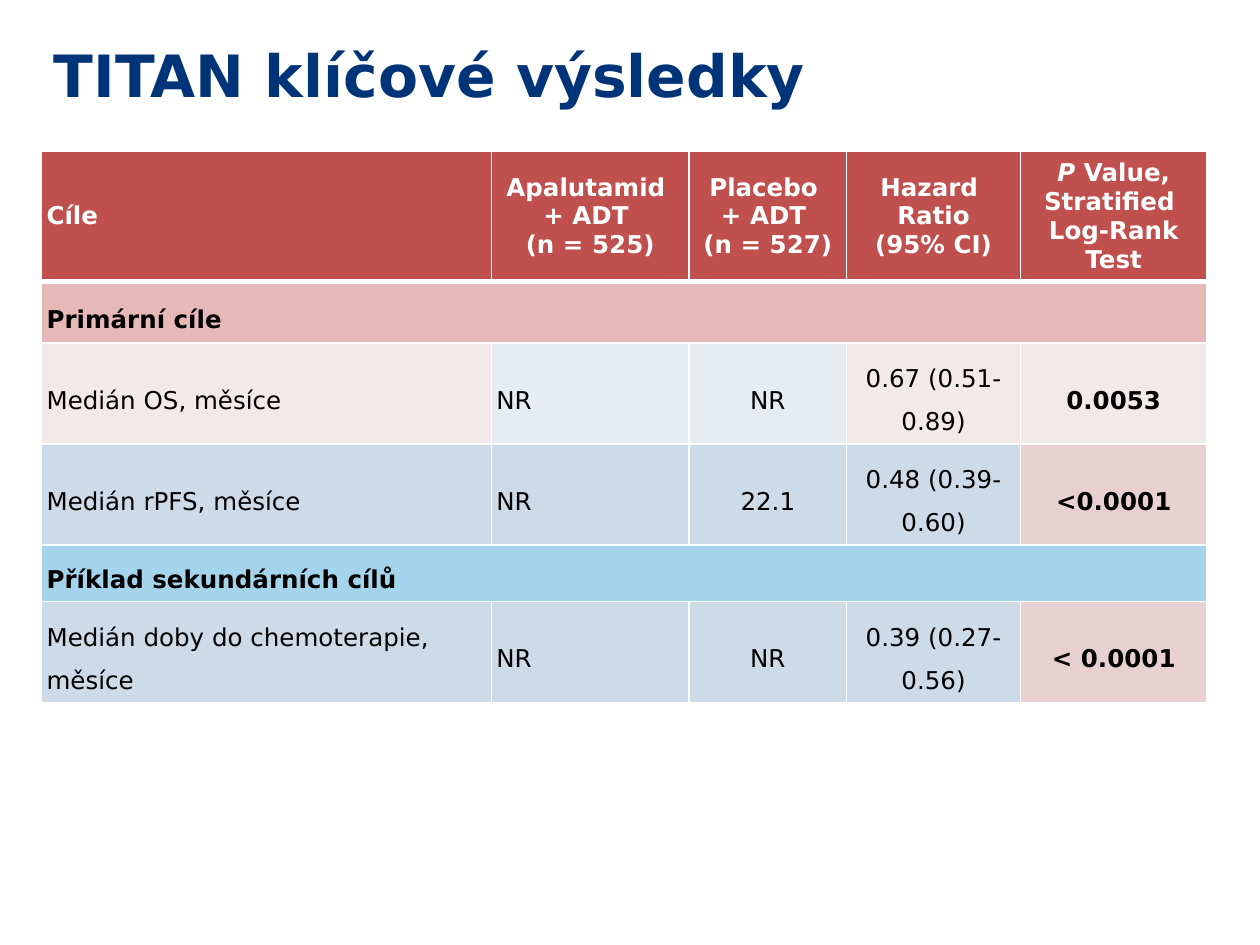
from lxml.etree import SubElement as Sub
from pptx import Presentation
from pptx.dml.color import RGBColor as RGB
from pptx.enum.text import MSO_ANCHOR as Anchor, PP_ALIGN as Align
from pptx.oxml.ns import qn
from pptx.util import Inches, Pt

NAVY = RGB(0x00, 0x34, 0x79)
WHITE = RGB(0xFF, 0xFF, 0xFF)
BLACK = RGB(0x00, 0x00, 0x00)
RED = RGB(0xC0, 0x50, 0x4D)
PINK = RGB(0xE6, 0xB9, 0xB8)
BLUSH = RGB(0xF4, 0xE9, 0xE9)
ROSE = RGB(0xE8, 0xD0, 0xD0)
MIST = RGB(0xE7, 0xEC, 0xF1)
STEEL = RGB(0xCD, 0xDB, 0xE8)
SKY = RGB(0xA4, 0xD4, 0xEB)

WIDTHS = [3.57, 1.57, 1.25, 1.38, 1.48]
HEIGHTS = [0.99, 0.49, 0.45, 0.45, 0.45, 0.45]
PALE = [BLUSH, MIST, MIST, BLUSH, BLUSH]
COOL = [STEEL] * 4 + [ROSE]
HEADS = [
    "Cíle",
    "Apalutamid \n+ ADT \n(n = 525)",
    "Placebo \n+ ADT \n(n = 527)",
    "Hazard \nRatio\n(95% CI)",
    "*P* Value, Stratified \vLog-Rank Test",
]
ROWS = [
    (["Primární cíle"], [PINK] * 5),
    (["Medián OS, měsíce", "NR", "NR", "0.67 (0.51-0.89)", "0.0053"], PALE),
    (["Medián rPFS, měsíce", "NR", "22.1", "0.48 (0.39-0.60)", "<0.0001"], COOL),
    (["Příklad sekundárních cílů"], [SKY] * 5),
    (["Medián doby do chemoterapie, měsíce", "NR", "NR", "0.39 (0.27-0.56)",
      "< 0.0001"], COOL),
]


def write(frame, text, size=14, color=BLACK, bold=False, align=Align.LEFT,
          font="DejaVu Sans", line=None, gap=None):
    """Fill a frame; newline parts paragraphs, \\v breaks lines, stars mark italics."""
    frame.word_wrap = True
    for n, part in enumerate(text.split("\n")):
        para = frame.add_paragraph() if n else frame.paragraphs[0]
        para.alignment = align
        para.line_spacing = line
        para.space_before = para.space_after = gap
        for i, piece in enumerate(part.split("*")):
            for j, words in enumerate(piece.split("\v")):
                if j:
                    para.add_line_break()
                if words:
                    run = para.add_run()
                    run.text = words
                    face = run.font
                    face.name, face.size = font, Pt(size)
                    face.bold, face.italic = bold, i % 2 == 1
                    face.color.rgb = color


class Deck:
    """Hold the style and the current slide, and draw each kind of element."""

    def __init__(self, edge=WHITE):
        self.edge = edge
        self.show = Presentation()
        self.show.slide_width, self.show.slide_height = Inches(10), Inches(7.5)
        self.slide = self.show.slides.add_slide(self.show.slide_layouts[6])

    def title(self, text, x, y, w, h):
        box = self.slide.shapes.add_textbox(*map(Inches, (x, y, w, h)))
        box.text_frame.vertical_anchor = Anchor.MIDDLE
        write(box.text_frame, text, size=33.3, color=NAVY, bold=True)

    def table(self, x, y, widths, heights):
        grid = self.slide.shapes.add_table(
            len(heights), len(widths),
            *map(Inches, (x, y, sum(widths), sum(heights)))).table
        for col, width in zip(grid.columns, widths):
            col.width = Inches(width)
        for row, height in zip(grid.rows, heights):
            row.height = Inches(height)
        return grid

    def cell(self, cell, fill, base=1):
        cell.margin_left = cell.margin_right = Inches(0.04)
        cell.margin_top = cell.margin_bottom = Inches(0.05)
        cell.vertical_anchor = Anchor.MIDDLE
        props = cell._tc.get_or_add_tcPr()
        for side in "LRTB":
            wide = base if side == "B" else 1
            line = Sub(props, qn(f"a:ln{side}"), w=str(Pt(wide)))
            Sub(Sub(line, qn("a:solidFill")), qn("a:srgbClr"), val=str(self.edge))
        cell.fill.solid()
        cell.fill.fore_color.rgb = fill


def main():
    deck = Deck()
    deck.title("TITAN klíčové výsledky", 0.33, 0.2, 9.01, 0.78)
    grid = deck.table(0.33, 1.2, WIDTHS, HEIGHTS)
    for c, text in enumerate(HEADS):
        cell = grid.cell(0, c)
        deck.cell(cell, RED, base=3)
        write(cell.text_frame, text, color=WHITE, bold=True,
              align=Align.CENTER if c else Align.LEFT)
    for r, (texts, fills) in enumerate(ROWS, 1):
        for c, fill in enumerate(fills):
            deck.cell(grid.cell(r, c), fill)
        band = len(texts) == 1
        if band:
            grid.cell(r, 0).merge(grid.cell(r, 4))
        for c, text in enumerate(texts):
            write(grid.cell(r, c).text_frame, text, bold=band or c == 4,
                  align=Align.CENTER if c > 1 else Align.LEFT,
                  line=1.5, gap=Pt(6))
    deck.show.save("out.pptx")


if __name__ == "__main__":
    main()
